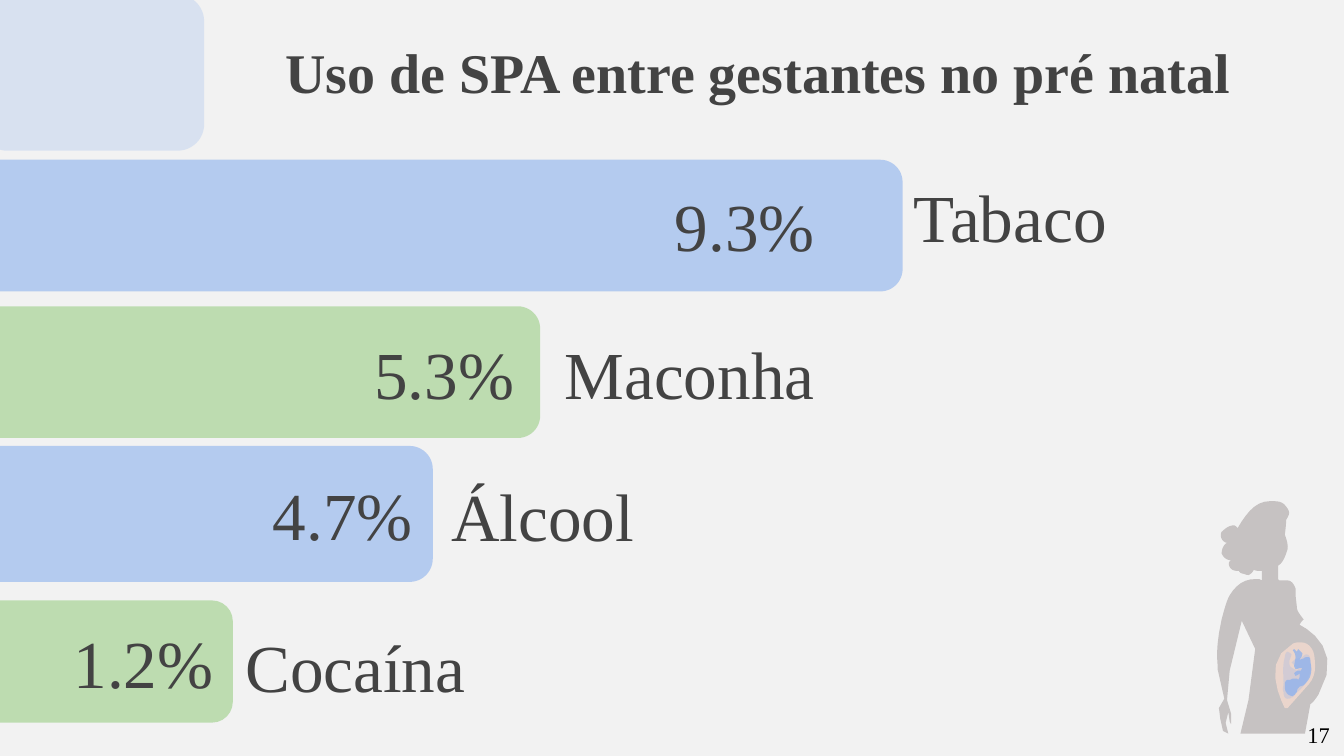
from lxml import etree
from pptx import Presentation
from pptx.dml.color import RGBColor
from pptx.enum.shapes import MSO_SHAPE
from pptx.enum.text import MSO_ANCHOR, PP_ALIGN
from pptx.oxml.ns import qn
from pptx.util import Cm, Pt

BACKGROUND = RGBColor(0xF2, 0xF2, 0xF2)
TEXT_GREY = RGBColor(0x43, 0x43, 0x43)
BLACK = RGBColor(0, 0, 0)
BLUE = RGBColor(0x8C, 0xB1, 0xEE)
GREEN = RGBColor(0xAB, 0xD5, 0x9A)
BODY_GREY = RGBColor(0xC6, 0xC2, 0xC2)
WOMB_PINK = RGBColor(0xF2, 0xD9, 0xCF)

ROUNDED = MSO_SHAPE.ROUNDED_RECTANGLE
MIDDLE, TOP = MSO_ANCHOR.MIDDLE, MSO_ANCHOR.TOP
LEFT, CENTER, RIGHT = PP_ALIGN.LEFT, PP_ALIGN.CENTER, PP_ALIGN.RIGHT

FONT = "Times New Roman"
INSET = 0.25
OUTLINE_UNIT = 0.0254  # centimetres per outline unit
CURVE_STEPS = 6

# Left, top, width, height in cm; colour, opacity, value, right inset
BARS = [
    (-1.96, 3.02, 19.02, 2.49, BLUE, 60, None, INSET),
    (-3.99, 5.79, 14.2, 2.49, GREEN, 74, "5.3%", 0.37),
    (-3.12, 8.43, 11.3, 2.57, BLUE, 60, "4.7%", INSET),
    (-9.8, 11.35, 14.2, 2.31, GREEN, 74, "1.2%", INSET),
]

# Outlines: a pair is a corner, six numbers are a Bézier curve to the last pair
BODY = [
    (945, 373), (936, 373, 930, 379, 924, 388), (921, 393),
    (920, 392, 919, 391, 918, 391), (915, 391, 912, 393, 910, 395),
    (908, 396, 908, 399, 909, 401), (910, 403, 912, 404, 913, 404),
    (911, 405, 909, 408, 909, 412), (910, 414, 912, 417, 916, 417),
    (914, 418, 914, 420, 915, 422), (916, 424, 918, 425, 922, 425),
    (922, 426, 924, 427, 925, 427), (926, 427, 927, 428, 929, 428),
    (931, 427, 932, 426, 933, 424), (934, 425, 937, 425, 939, 425),
    (939, 432), (937, 431), (934, 431), (926, 431, 920, 435, 915, 443),
    (913, 446, 910, 457, 909, 461), (904, 484, 906, 492, 906, 495),
    (906, 498), (911, 520), (907, 527), (908, 535), (910, 544), (914, 546),
    (912, 538), (914, 530), (915, 537), (916, 539), (916, 531), (913, 521),
    (915, 499), (924, 462), (934, 483), (929, 521), (923, 546), (971, 546),
    (975, 524), (977, 523, 979, 520, 981, 517),
    (1000, 485, 975, 469, 967, 465), (968, 463, 969, 462, 970, 461),
    (966, 456, 965, 454, 965, 452), (964, 443),
    (964, 442, 964, 440, 964, 438), (963, 435, 961, 432, 958, 432),
    (952, 432), (951, 431), (951, 421), (955, 419, 957, 412, 958, 409),
    (959, 405, 956, 398, 956, 398), (956, 398, 957, 391, 957, 387),
    (960, 382, 960, 381, 957, 377), (954, 373, 951, 373, 945, 373),
]
WOMB = [
    (968, 478), (966, 478, 964, 478, 962, 479), (939, 491, 952, 519, 956, 527),
    (958, 527), (974, 509), (979, 503, 979, 497, 978, 488),
    (977, 482, 973, 478, 968, 478),
]
FETUS_SHADE = [
    (958, 485), (957, 485, 956, 487, 956, 489), (954, 495, 955, 502, 955, 508),
    (955, 511, 954, 513, 955, 515), (955, 518, 956, 520, 958, 520),
    (959, 520, 960, 520, 961, 519), (962, 519, 963, 518, 964, 516),
    (968, 513, 971, 510, 973, 505), (975, 501, 976, 496, 975, 491),
    (975, 489, 974, 487, 972, 487), (971, 487, 970, 488, 969, 489),
    (967, 490, 965, 490, 963, 491), (961, 493), (962, 494), (965, 497),
    (966, 498), (965, 499), (963, 498, 961, 497, 960, 496),
    (959, 494, 959, 492, 960, 490), (961, 487), (960, 486), (958, 485),
]
FETUS = [
    (966, 483), (965, 485), (963, 483), (962, 484),
    (963, 485, 964, 487, 964, 489), (964, 491, 963, 494, 963, 496),
    (964, 498), (965, 498), (967, 497), (969, 497), (968, 499), (966, 499),
    (964, 500), (963, 501), (964, 503), (966, 502), (967, 501),
    (967, 502, 967, 503, 967, 504), (966, 506), (965, 505), (962, 505),
    (960, 506), (958, 506), (957, 506, 956, 508, 956, 509),
    (956, 511, 956, 514, 957, 515), (958, 517, 960, 518, 962, 518),
    (963, 517, 964, 517, 964, 516), (965, 515),
    (965, 513, 966, 512, 967, 511), (970, 510),
    (972, 508, 974, 506, 975, 503), (976, 500, 976, 496, 975, 493),
    (975, 491, 975, 490, 974, 489), (972, 489, 971, 489, 970, 490),
    (967, 491), (967, 490, 969, 489, 969, 487), (969, 486),
    (968, 485, 967, 484, 966, 483),
]


def paint(shape, color, opacity=100):
    shape.shadow.inherit = False
    shape.line.fill.background()
    shape.fill.solid()
    shape.fill.fore_color.rgb = color
    if opacity < 100:
        color_element = shape.fill._xPr.find(".//" + qn("a:srgbClr"))
        etree.SubElement(color_element, qn("a:alpha"), val=str(opacity * 1000))


def write(shape, text, align=LEFT, size=36, bold=False, color=TEXT_GREY, anchor=MIDDLE,
          wrap=True, insets=(INSET, INSET, INSET, INSET)):
    """Fill a shape with one line; insets are left, top, right, bottom in cm."""
    frame = shape.text_frame
    frame.text = text
    frame.word_wrap = wrap
    frame.vertical_anchor = anchor
    (frame.margin_left, frame.margin_top,
     frame.margin_right, frame.margin_bottom) = map(Cm, insets)
    paragraph = frame.paragraphs[0]
    paragraph.alignment = align
    font = paragraph.runs[0].font
    font.name, font.size, font.bold = FONT, Pt(size), bold
    font.color.rgb = color


def add_text(slide, box, text, **style):
    write(slide.shapes.add_textbox(*map(Cm, box)), text, **style)


def add_bar(slide, box, color, opacity):
    bar = slide.shapes.add_shape(ROUNDED, *map(Cm, box))
    bar.adjustments[0] = 0.17
    paint(bar, color, opacity)
    return bar


def outline_points(outline):
    """Turn corners and curves into closely spaced points in EMU."""
    points = [outline[0]]
    for segment in outline[1:]:
        if len(segment) == 2:
            points.append(segment)
            continue
        controls = [points[-1], segment[:2], segment[2:4], segment[4:]]
        for step in range(1, CURVE_STEPS + 1):
            t = step / CURVE_STEPS
            weights = ((1 - t) ** 3, 3 * t * (1 - t) ** 2, 3 * t * t * (1 - t), t ** 3)
            points.append(tuple(
                sum(weight * control[axis] for weight, control in zip(weights, controls))
                for axis in (0, 1)))
    return [(Cm(x * OUTLINE_UNIT), Cm(y * OUTLINE_UNIT)) for x, y in points]


def add_outline(group, outline, color, opacity=100):
    start, *others = outline_points(outline)
    builder = group.shapes.build_freeform(*start)
    builder.add_line_segments(others, close=True)
    paint(builder.convert_to_shape(), color, opacity)


def add_pregnant_woman(slide):
    group = slide.shapes.add_group_shape()
    add_outline(group, BODY, BODY_GREY)
    add_outline(group, WOMB, WOMB_PINK, 84)
    add_outline(group, FETUS_SHADE, BLUE, 25)
    add_outline(group, FETUS, BLUE, 74)


def main():
    presentation = Presentation()
    presentation.slide_width, presentation.slide_height = Cm(25.4), Cm(14.29)
    slide = presentation.slides.add_slide(presentation.slide_layouts[6])
    slide.background.fill.solid()
    slide.background.fill.fore_color.rgb = BACKGROUND

    add_bar(slide, (-0.36, -0.1, 4.22, 2.95), BLUE, 25)
    add_text(slide, (3.25, 0.38, 22.15, 2.08), "Uso de SPA entre gestantes no pré natal",
             align=CENTER, size=30, bold=True, insets=(INSET, INSET, INSET, 0.41))

    for *box, color, opacity, value, right_inset in BARS:
        bar = add_bar(slide, box, color, opacity)
        if value:
            write(bar, value, align=RIGHT, insets=(INSET, INSET, right_inset, INSET))
    add_text(slide, (5.79, 2.9, 9.86, 2.69), "9.3%", align=RIGHT)

    add_text(slide, (17.02, 2.97, 5.26, 3.15), "Tabaco", insets=(INSET, INSET, INSET, 1.19))
    add_text(slide, (10.11, 5.46, 7.65, 3.15), "Maconha", insets=(0.56, INSET, INSET, INSET))
    add_text(slide, (8.28, 8.59, 9.47, 2.29), "Álcool")
    add_text(slide, (4.39, 11.68, 4.72, 1.8), "Cocaína", wrap=False)

    add_pregnant_woman(slide)
    add_text(slide, (24.46, 13.51, 0.94, 1.27), "17", size=12, color=BLACK, anchor=TOP,
             wrap=False, insets=(INSET, 0.13, INSET, 0.13))
    presentation.save("out.pptx")


if __name__ == "__main__":
    main()
